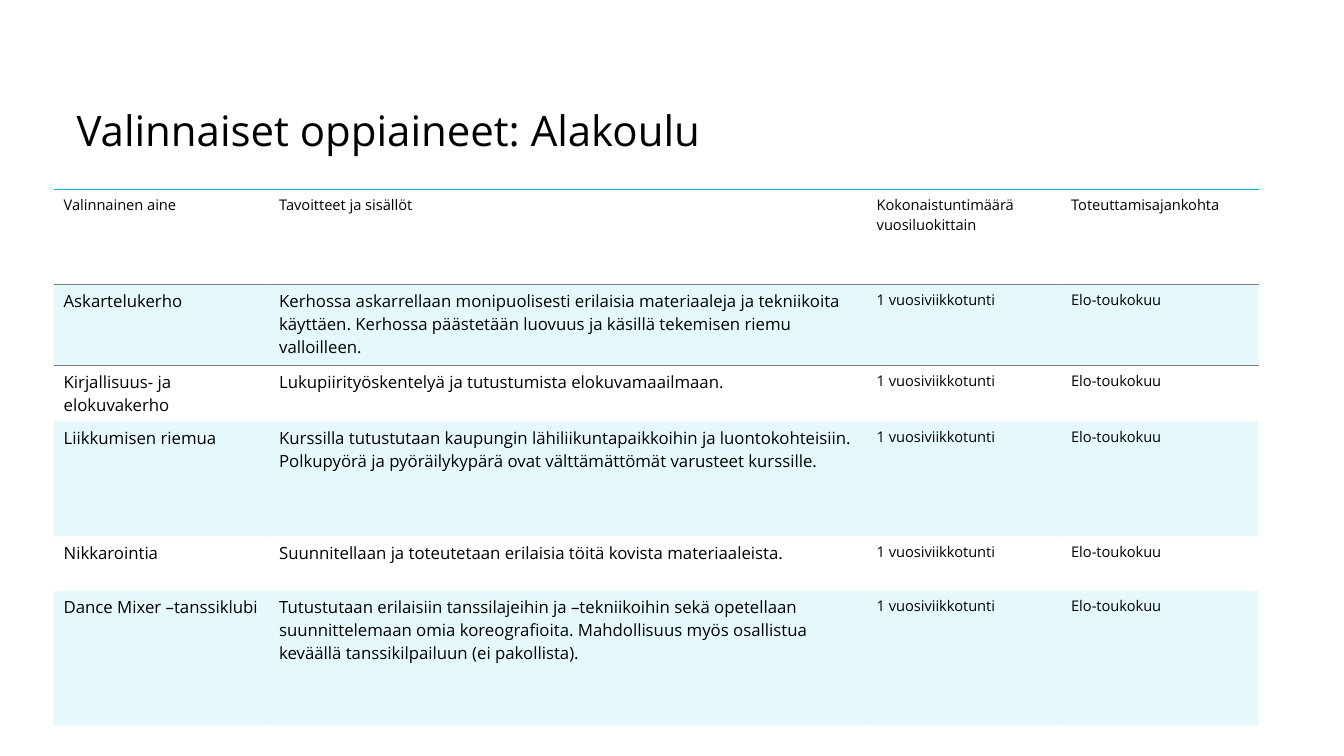
from lxml import etree
from pptx import Presentation
from pptx.dml.color import RGBColor
from pptx.enum.text import MSO_ANCHOR, MSO_AUTO_SIZE, PP_ALIGN
from pptx.oxml.ns import qn
from pptx.util import Cm, Pt

BOTTOM = MSO_ANCHOR.BOTTOM
NO_AUTOFIT = MSO_AUTO_SIZE.NONE
LEFT = PP_ALIGN.LEFT

# Content
TITLE = "Valinnaiset oppiaineet: Alakoulu"
HEADER = ("Valinnainen aine", "Tavoitteet ja sisällöt",
          "Kokonaistuntimäärä vuosiluokittain", "Toteuttamisajankohta")
HOURS, PERIOD = "1 vuosiviikkotunti", "Elo-toukokuu"
SUBJECTS = [
    ("Askartelukerho",
     "Kerhossa askarrellaan monipuolisesti erilaisia materiaaleja ja tekniikoita "
     "käyttäen. Kerhossa päästetään luovuus ja käsillä tekemisen riemu valloilleen."),
    ("Kirjallisuus- ja elokuvakerho",
     "Lukupiirityöskentelyä ja tutustumista elokuvamaailmaan."),
    ("Liikkumisen riemua",
     "Kurssilla tutustutaan kaupungin lähiliikuntapaikkoihin ja luontokohteisiin. "
     "Polkupyörä ja pyöräilykypärä ovat välttämättömät varusteet kurssille."),
    ("Nikkarointia",
     "Suunnitellaan ja toteutetaan erilaisia töitä kovista materiaaleista."),
    ("Dance Mixer –tanssiklubi",
     "Tutustutaan erilaisiin tanssilajeihin ja –tekniikoihin sekä opetellaan "
     "suunnittelemaan omia koreografioita. Mahdollisuus myös osallistua keväällä "
     "tanssikilpailuun (ei pakollista)."),
]

# Style
COLORS = {"text": "000000", "top": "00BBDC", "rule": "808080", "band": "80DDEE"}
BAND_ALPHA = "20000"
FONT = "Open Sans"
PLAIN_TABLE_STYLE = "{2D5ABB26-0587-4C30-8999-92F81FD0307C}"
COLUMN_WIDTHS = (5.43, 15.06, 4.9, 4.98)
ROW_HEIGHTS = (2.39, 2.04, 1.4, 2.9, 1.37, 3.4)


def format_paragraph(paragraph, size):
    paragraph.alignment = LEFT
    paragraph.font.name = FONT
    paragraph.font.size = Pt(size)
    paragraph.font.bold = False
    paragraph.font.color.rgb = RGBColor.from_string(COLORS["text"])


def add_border(cell, side, color, width):
    properties = cell._tc.get_or_add_tcPr()
    line = etree.SubElement(properties, qn(f"a:{side}"), w=str(Pt(width)))
    fill = etree.SubElement(line, qn("a:solidFill"))
    etree.SubElement(fill, qn("a:srgbClr"), val=color)


def fill_band(cell):
    cell.fill.solid()
    cell.fill.fore_color.rgb = RGBColor.from_string(COLORS["band"])
    color = cell._tc.tcPr.find(qn("a:solidFill")).find(qn("a:srgbClr"))
    etree.SubElement(color, qn("a:alpha"), val=BAND_ALPHA)


def main():
    presentation = Presentation()
    presentation.slide_width, presentation.slide_height = Cm(33.87), Cm(19.05)
    slide = presentation.slides.add_slide(presentation.slide_layouts[5])

    # Title
    title = slide.shapes.title
    title.left, title.top, title.width, title.height = Cm(1.93), Cm(1.52), Cm(26.04), Cm(2.39)
    frame = title.text_frame
    frame.text = TITLE
    frame.word_wrap = True
    frame.auto_size = NO_AUTOFIT
    frame.vertical_anchor = BOTTOM
    frame.margin_left = frame.margin_right = frame.margin_top = frame.margin_bottom = 0
    frame.paragraphs[0].line_spacing = 0.9
    format_paragraph(frame.paragraphs[0], 30)

    # Table of subjects
    rows = [HEADER] + [(*subject, HOURS, PERIOD) for subject in SUBJECTS]
    table = slide.shapes.add_table(len(rows), len(HEADER), Cm(1.35), Cm(4.78),
                                   Cm(sum(COLUMN_WIDTHS)), Cm(sum(ROW_HEIGHTS))).table
    table._tbl.tblPr.find(qn("a:tableStyleId")).text = PLAIN_TABLE_STYLE
    for column, width in zip(table.columns, COLUMN_WIDTHS):
        column.width = Cm(width)
    for row, height in zip(table.rows, ROW_HEIGHTS):
        row.height = Cm(height)

    for row_index, texts in enumerate(rows):
        for column_index, text in enumerate(texts):
            cell = table.cell(row_index, column_index)
            cell.text = text
            is_subject_text = row_index > 0 and column_index < 2
            format_paragraph(cell.text_frame.paragraphs[0], 12 if is_subject_text else 10.5)
            if row_index == 0:
                add_border(cell, "lnT", COLORS["top"], 1)
                add_border(cell, "lnB", COLORS["rule"], 0.5)
            if row_index % 2:
                add_border(cell, "lnT", COLORS["rule"], 0.5) if row_index == 1 else None
                fill_band(cell)
            else:
                cell.fill.background()

    presentation.save("out.pptx")


if __name__ == "__main__":
    main()
